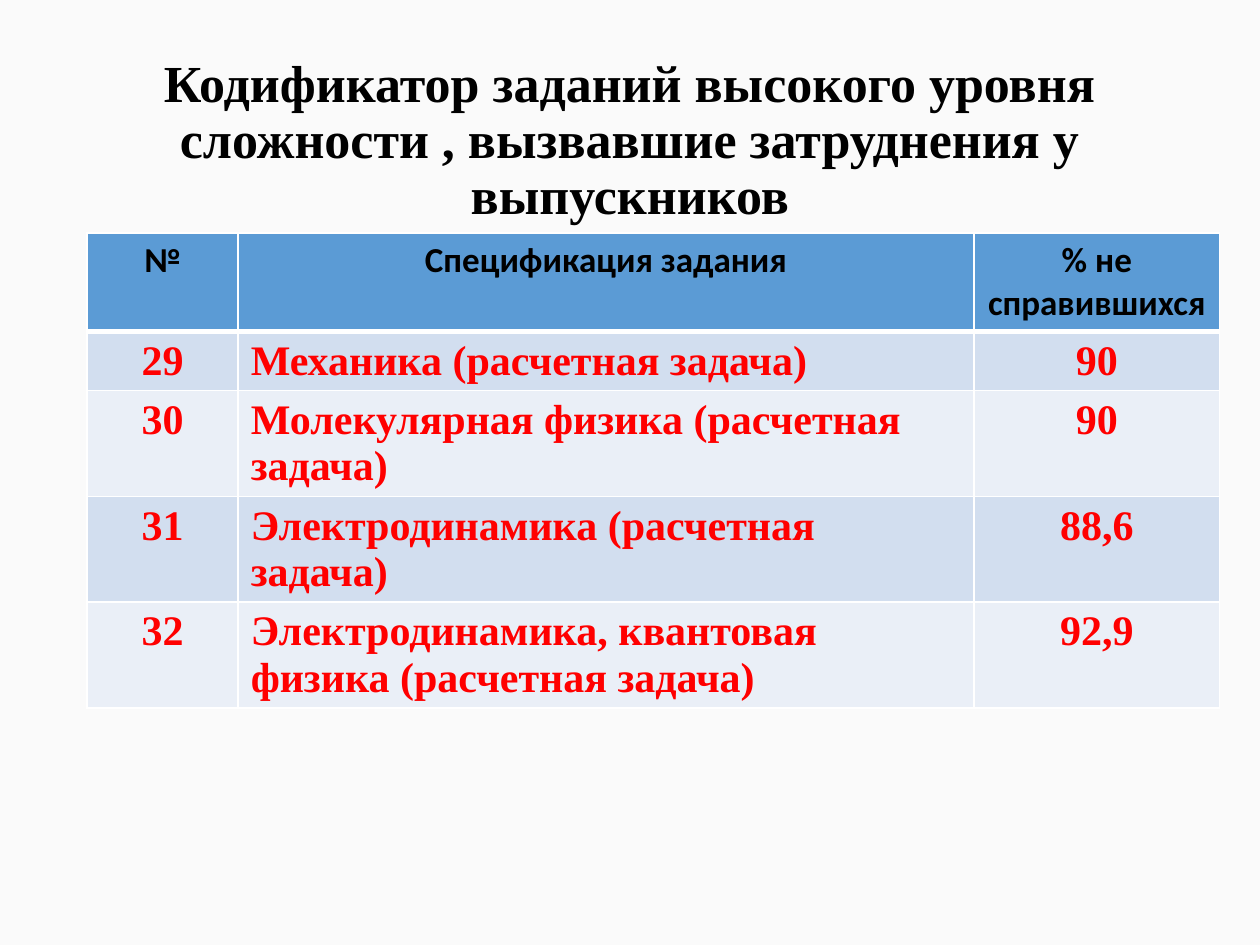
from lxml.etree import SubElement
from pptx import Presentation
from pptx.dml.color import RGBColor
from pptx.enum.text import MSO_ANCHOR, MSO_AUTO_SIZE, PP_ALIGN
from pptx.oxml.ns import qn
from pptx.util import Inches, Pt

COLORS = {
    "background": "FAFAFA",
    "title": "000000",
    "header": "5B9BD5",
    "odd": "D2DEEF",
    "even": "EAEFF7",
    "task": "FF0000",
    "border": "FFFFFF",
}
TITLE = "Кодификатор заданий высокого уровня сложности , вызвавшие затруднения у выпускников"
ROWS = [
    ("№", "Спецификация задания", "% не справившихся"),
    ("29", "Механика (расчетная задача)", "90"),
    ("30", "Молекулярная физика (расчетная задача)", "90"),
    ("31", "Электродинамика (расчетная задача)", "88,6"),
    ("32", "Электродинамика, квантовая физика (расчетная задача)", "92,9"),
]
COLUMN_WIDTHS = [1.2, 5.84, 1.95]
ROW_HEIGHTS = [0.78, 0.46, 0.84, 0.84, 0.84]


def color(name):
    return RGBColor.from_string(COLORS[name])


def style_paragraph(para, font_name, size, color_name, align):
    para.alignment = align
    font = para.font
    font.name, font.size, font.bold = font_name, Pt(size), True
    font.color.rgb = color(color_name)


def add_title(page):
    title = page.shapes.title
    title.left, title.top = Inches(0.69), Inches(0.4)
    title.width, title.height = Inches(8.62), Inches(1.45)
    frame = title.text_frame
    frame.text = TITLE
    frame.word_wrap = True
    frame.auto_size = MSO_AUTO_SIZE.NONE
    frame.vertical_anchor = MSO_ANCHOR.MIDDLE
    para = frame.paragraphs[0]
    style_paragraph(para, "Times New Roman", 29.7, "title", PP_ALIGN.CENTER)
    para.line_spacing = 0.9


def set_borders(cell, top, bottom):
    """Draw all four sides; top and bottom are widths in points."""
    properties = cell._tc.get_or_add_tcPr()
    sides = [("a:lnL", 1), ("a:lnR", 1), ("a:lnT", top), ("a:lnB", bottom)]
    for index, (tag, width) in enumerate(sides):
        line = SubElement(properties, qn(tag), w=str(Pt(width)))
        fill = SubElement(line, qn("a:solidFill"))
        SubElement(fill, qn("a:srgbClr"), val=COLORS["border"])
        properties.remove(line)
        properties.insert(index, line)


def fill_cell(cell, text, row, column):
    is_header = row == 0
    cell.text = text
    cell.fill.solid()
    cell.fill.fore_color.rgb = color("header" if is_header else "odd" if row % 2 else "even")
    set_borders(cell, top=3 if row == 1 else 1, bottom=3 if is_header else 1)
    para = cell.text_frame.paragraphs[0]
    if is_header:
        style_paragraph(para, "Calibri", 20, "title", PP_ALIGN.CENTER)
    else:
        align = PP_ALIGN.LEFT if column == 1 else PP_ALIGN.CENTER
        style_paragraph(para, "Times New Roman", 24, "task", align)


def add_task_table(page):
    table = page.shapes.add_table(
        len(ROWS), len(COLUMN_WIDTHS), Inches(0.69), Inches(1.85),
        Inches(sum(COLUMN_WIDTHS)), Inches(sum(ROW_HEIGHTS)),
    ).table
    for column, width in zip(table.columns, COLUMN_WIDTHS):
        column.width = Inches(width)
    for row, height in zip(table.rows, ROW_HEIGHTS):
        row.height = Inches(height)
    for row, texts in enumerate(ROWS):
        for column, text in enumerate(texts):
            fill_cell(table.cell(row, column), text, row, column)


def main():
    deck = Presentation()
    deck.slide_width, deck.slide_height = Inches(10), Inches(7.5)
    page = deck.slides.add_slide(deck.slide_layouts[5])
    page.background.fill.solid()
    page.background.fill.fore_color.rgb = color("background")
    add_title(page)
    add_task_table(page)
    deck.save("out.pptx")


if __name__ == "__main__":
    main()
